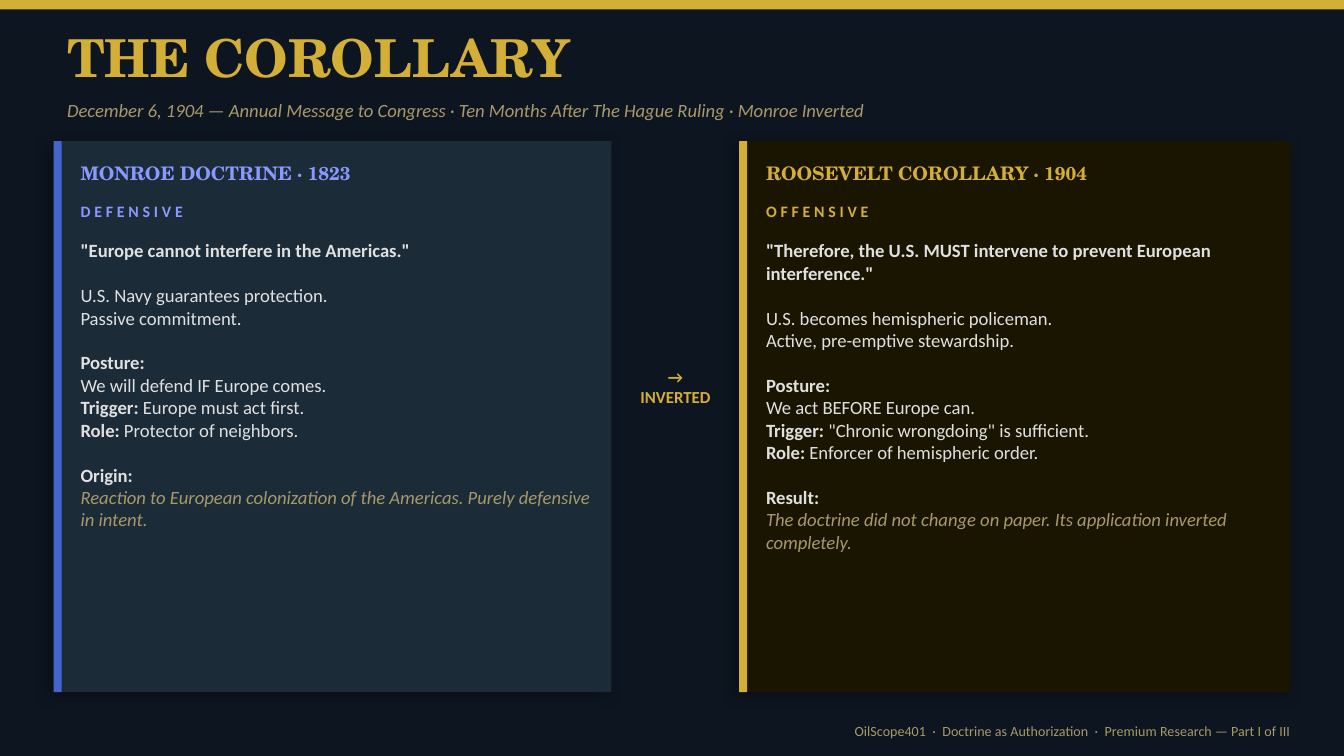
from lxml import etree
from pptx import Presentation
from pptx import util as u
from pptx.dml.color import RGBColor
from pptx.enum import shapes, text
from pptx.oxml.ns import qn

GOLD = RGBColor(0xD4, 0xAF, 0x37)
SAND = RGBColor(0xA8, 0x99, 0x68)
NIGHT = RGBColor(0x0D, 0x15, 0x20)
SLATE = RGBColor(0x1C, 0x2B, 0x38)
UMBER = RGBColor(0x1A, 0x15, 0x00)
BLUE = RGBColor(0x44, 0x66, 0xCC)
LILAC = RGBColor(0x88, 0x99, 0xFF)
PALE = RGBColor(0xE0, 0xE0, 0xE0)

SERIF, SANS = "TeX Gyre Schola", "Calibri"
LEFT, CENTER, RIGHT = text.PP_ALIGN.LEFT, text.PP_ALIGN.CENTER, text.PP_ALIGN.RIGHT
MIDDLE, TOP = text.MSO_ANCHOR.MIDDLE, text.MSO_ANCHOR.TOP

STYLES = {
    "title": dict(name=SERIF, size=28, color=GOLD, bold=True),
    "subtitle": dict(name=SANS, size=10, color=SAND, italic=True),
    "heading": dict(name=SERIF, size=10, bold=True),
    "tag": dict(name=SANS, size=8.5, bold=True),
    "plain": dict(name=SANS, size=10, color=PALE, bold=False),
    "strong": dict(name=SANS, size=10, color=PALE, bold=True),
    "aside": dict(name=SANS, size=10, color=SAND, bold=False, italic=True),
    "arrow": dict(name=SANS, size=9, color=GOLD, bold=True),
    "footer": dict(name=SANS, size=7.5, color=SAND),
}

TITLE = "THE COROLLARY"
SUBTITLE = ("December 6, 1904 — Annual Message to Congress · "
            "Ten Months After The Hague Ruling · Monroe Inverted")
FOOTER = "  ·  ".join(["OilScope401", "Doctrine as Authorization",
                       "Premium Research — Part I of III"])

CARDS = [
    dict(left=0.4, width=4.15, fill=SLATE, edge=BLUE, accent=LILAC,
         heading="MONROE DOCTRINE · 1823", tag="DEFENSIVE",
         quote='"Europe cannot interfere in the Americas."',
         summary=["U.S. Navy guarantees protection.", "Passive commitment."],
         posture="We will defend IF Europe comes.",
         trigger="Europe must act first.", role="Protector of neighbors.",
         closing=("Origin:", "Reaction to European colonization of the Americas. "
                  "Purely defensive in intent.")),
    dict(left=5.5, width=4.1, fill=UMBER, edge=GOLD, accent=GOLD,
         heading="ROOSEVELT COROLLARY · 1904", tag="OFFENSIVE",
         quote='"Therefore, the U.S. MUST intervene to prevent European interference."',
         summary=["U.S. becomes hemispheric policeman.", "Active, pre-emptive stewardship."],
         posture="We act BEFORE Europe can.",
         trigger='"Chronic wrongdoing" is sufficient.', role="Enforcer of hemispheric order.",
         closing=("Result:", "The doctrine did not change on paper. "
                  "Its application inverted completely.")),
]
CARD_TOP, CARD_HEIGHT, EDGE_WIDTH = 1.05, 4.1, 0.06
TEXT_INSET, TEXT_WIDTH = 0.2, 3.8
GROUP_GAP = 12


def format_span(span, style, color=None):
    for key, value in {**STYLES[style], **({"color": color} if color else {})}.items():
        if key == "color":
            span.font.color.rgb = value
        else:
            setattr(span.font, key, u.Pt(value) if key == "size" else value)


def place(box, area):
    for key, value in zip(("left", "top", "width", "height"), area):
        setattr(box, key, u.Inches(value))


def fill_text(box, groups, anchor=MIDDLE, align=LEFT, color=None):
    frame = box.text_frame
    settings = dict(word_wrap=True, auto_size=text.MSO_AUTO_SIZE.NONE, vertical_anchor=anchor,
                    margin_left=0, margin_top=0, margin_right=0, margin_bottom=0)
    for key, value in settings.items():
        setattr(frame, key, value)
    para = None
    for group in groups:
        for index, line in enumerate(group):
            first = para is None
            para = frame.paragraphs[0] if first else frame.add_paragraph()
            para.alignment = align
            para.space_before = u.Pt(GROUP_GAP if index == 0 and not first else 0)
            for style, words in line:
                span = para.add_run()
                span.text = words
                format_span(span, style, color)


def add_text(page, area, groups, **options):
    box = page.shapes.add_textbox(*map(u.Inches, area))
    fill_text(box, groups, **options)
    return box


def add_block(page, area, color):
    block = page.shapes.add_shape(shapes.MSO_SHAPE.RECTANGLE, *map(u.Inches, area))
    block.shadow.inherit = False
    block.fill.solid()
    block.fill.fore_color.rgb = color
    block.line.fill.background()
    return block


def add_shadow(block):
    effects = block._element.spPr.find(qn("a:effectLst"))
    shadow = etree.SubElement(effects, qn("a:outerShdw"), blurRad=str(u.Pt(8)),
                              dist=str(u.Pt(3)), dir=str(135 * 60000),
                              algn="bl", rotWithShape="0")
    tint = etree.SubElement(shadow, qn("a:srgbClr"), val="000000")
    etree.SubElement(tint, qn("a:alpha"), val="30000")


def card_body(card):
    label, remark = card["closing"]
    return [
        [[("strong", card["quote"])]],
        [[("plain", line)] for line in card["summary"]],
        [[("strong", "Posture:")],
         [("plain", card["posture"])],
         [("strong", "Trigger: "), ("plain", card["trigger"])],
         [("strong", "Role: "), ("plain", card["role"])]],
        [[("strong", label)], [("aside", remark)]],
    ]


def add_card(page, card):
    left = card["left"]
    panel = add_block(page, (left, CARD_TOP, card["width"], CARD_HEIGHT), card["fill"])
    add_shadow(panel)
    add_block(page, (left, CARD_TOP, EDGE_WIDTH, CARD_HEIGHT), card["edge"])
    inner = left + TEXT_INSET
    add_text(page, (inner, 1.15, TEXT_WIDTH, 0.28), [[[("heading", card["heading"])]]],
             color=card["accent"])
    tag = add_text(page, (inner, 1.45, TEXT_WIDTH, 0.24), [[[("tag", card["tag"])]]],
                   color=card["accent"])
    tag.text_frame.paragraphs[0].runs[0].font._element.set("spc", "200")
    add_text(page, (inner, 1.78, TEXT_WIDTH, 3.2), card_body(card), anchor=TOP)


def main():
    deck = Presentation()
    deck.slide_width = u.Inches(10)
    deck.slide_height = deck.slide_width * 9 // 16
    page = deck.slides.add_slide(deck.slide_layouts[5])
    page.background.fill.solid()
    page.background.fill.fore_color.rgb = NIGHT

    place(page.shapes.title, (0.5, 0.18, 9, 0.48))
    fill_text(page.shapes.title, [[[("title", TITLE)]]])
    add_block(page, (0, 0, 10, 0.07), GOLD)
    add_text(page, (0.5, 0.68, 9, 0.28), [[[("subtitle", SUBTITLE)]]])
    for card in CARDS:
        add_card(page, card)
    add_text(page, (4.65, 2.5, 0.75, 0.75), [[[("arrow", "→")], [("arrow", "INVERTED")]]],
             align=CENTER)
    add_text(page, (0.4, 5.33, 9.2, 0.22), [[[("footer", FOOTER)]]], align=RIGHT)
    deck.save("out.pptx")


if __name__ == "__main__":
    main()
